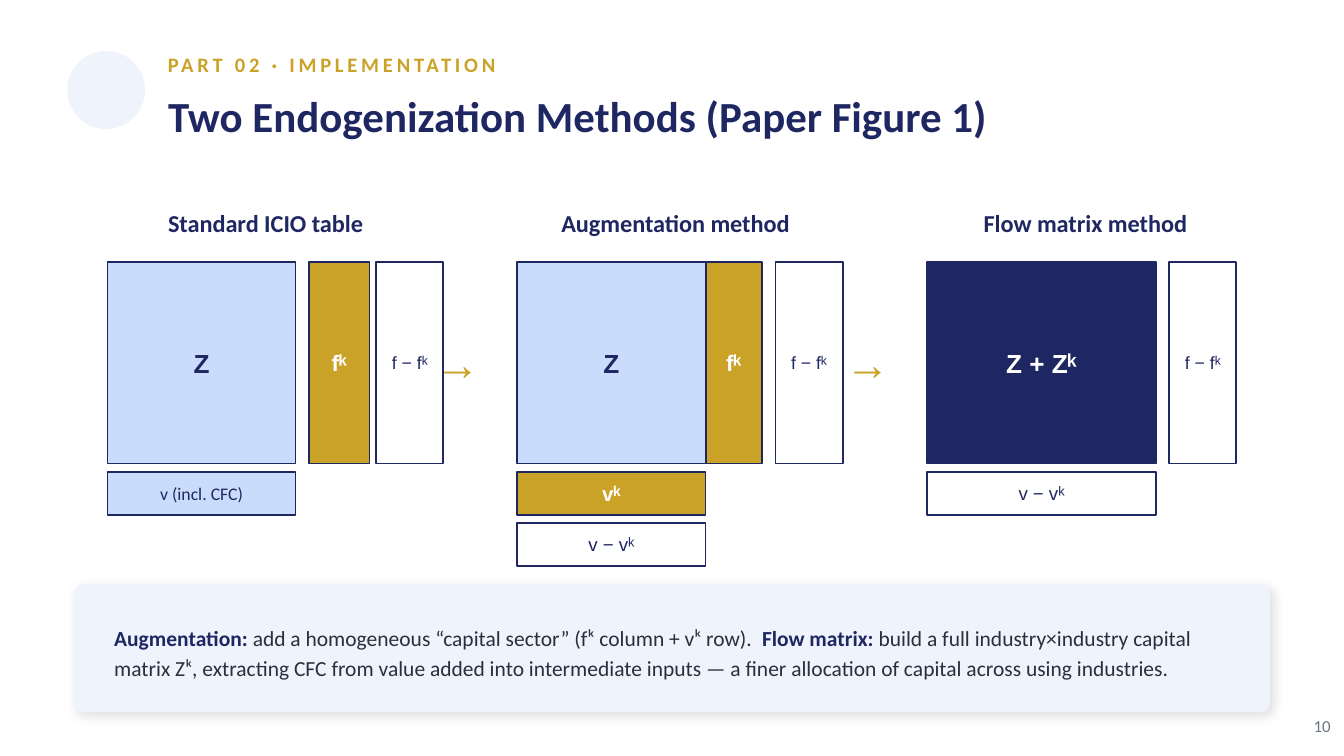
from dataclasses import dataclass

from lxml import etree
from pptx import Presentation
from pptx import util as u
from pptx.dml.color import RGBColor
from pptx.enum import shapes, text
from pptx.oxml.ns import qn

NAVY = RGBColor(0x1E, 0x27, 0x61)
GOLD = RGBColor(0xC9, 0xA2, 0x27)
SKY = RGBColor(0xCA, 0xDC, 0xFC)
MIST = RGBColor(0xEE, 0xF3, 0xFC)
WHITE = RGBColor(0xFF, 0xFF, 0xFF)
INK = RGBColor(0x26, 0x30, 0x3E)
GREY = RGBColor(0x6B, 0x75, 0x85)

LEFT, CENTER, RIGHT = text.PP_ALIGN.LEFT, text.PP_ALIGN.CENTER, text.PP_ALIGN.RIGHT

# The slide is a square grid, 100 columns wide.
WIDTH = u.Inches(10)
HEIGHT = WIDTH * 9 // 16
UNIT = WIDTH / 100

PANEL_LEFT, PANEL_PITCH = 8, 30.5
MATRIX_TOP, MATRIX_HEIGHT = 19.5, 15
BAR_HEIGHT, BAR_GAP = 3.2, 0.6


@dataclass(frozen=True)
class Area:
    """Place on the slide, in grid units."""
    left: float
    top: float
    width: float
    height: float

    def emu(self) -> list[int]:
        return [round(n * UNIT) for n in (self.left, self.top, self.width, self.height)]


@dataclass(frozen=True)
class Span:
    words: str
    size: float
    color: RGBColor
    bold: bool = False
    font: str = "Calibri"


@dataclass(frozen=True)
class Block:
    """Labelled rectangle; band 0 is the matrix, 1 and 2 are the bars below."""
    label: Span
    fill: RGBColor
    offset: float
    width: float
    band: int = 0


@dataclass(frozen=True)
class Panel:
    heading: str
    blocks: list[Block]


def symbol(words: str, size: float, color: RGBColor = NAVY, bold: bool = False) -> Span:
    return Span(words, size, color, bold, "Arial")


def final_demand(offset: float) -> Block:
    return Block(symbol("f − fᵏ", 9.5), WHITE, offset, 5)


def net_value_added(width: float, band: int) -> Block:
    return Block(symbol("v − vᵏ", 10), WHITE, 0, width, band)


Z_BLOCK = Block(symbol("Z", 14, bold=True), SKY, 0, 14)
CAPITAL = symbol("fᵏ", 12, WHITE, True)

PANELS = [
    Panel("Standard ICIO table", [
        Z_BLOCK,
        Block(CAPITAL, GOLD, 15, 4.5),
        final_demand(20),
        Block(Span("v (incl. CFC)", 9.5, NAVY), SKY, 0, 14, 1),
    ]),
    Panel("Augmentation method", [
        Z_BLOCK,
        Block(CAPITAL, GOLD, 14, 4.2),
        Block(symbol("vᵏ", 11, WHITE, True), GOLD, 0, 14, 1),
        net_value_added(14, 2),
        final_demand(19.2),
    ]),
    Panel("Flow matrix method", [
        Block(symbol("Z + Zᵏ", 14, WHITE, True), NAVY, 0, 17),
        net_value_added(17, 1),
        final_demand(18),
    ]),
]

EXPLANATION = [
    Span("Augmentation: ", 11.5, NAVY, True),
    Span("add a homogeneous “capital sector” (fᵏ column + vᵏ row).  ", 11.5, INK),
    Span("Flow matrix: ", 11.5, NAVY, True),
    Span("build a full industry×industry capital matrix Zᵏ, extracting CFC from value added "
         "into intermediate inputs — a finer allocation of capital across using industries.",
         11.5, INK),
]


def write(shape, spans: list[Span], align=LEFT):
    """Fill a shape with one paragraph, centred vertically and without insets."""
    frame = shape.text_frame
    frame.auto_size = text.MSO_AUTO_SIZE.NONE
    frame.word_wrap = True
    frame.vertical_anchor = text.MSO_ANCHOR.MIDDLE
    frame.margin_left = frame.margin_top = frame.margin_right = frame.margin_bottom = 0
    para = frame.paragraphs[0]
    para.alignment = align
    for span in spans:
        run = para.add_run()
        run.text = span.words
        run.font.name = span.font
        run.font.size = u.Pt(span.size)
        run.font.bold = span.bold
        run.font.color.rgb = span.color
    return para


def add_text(page, area: Area, spans: list[Span], align=LEFT):
    return write(page.shapes.add_textbox(*area.emu()), spans, align)


def add_filled(page, kind, area: Area, fill: RGBColor):
    shape = page.shapes.add_shape(kind, *area.emu())
    shape.shadow.inherit = False
    shape.fill.solid()
    shape.fill.fore_color.rgb = fill
    shape.line.fill.background()
    return shape


def add_soft_shadow(shape) -> None:
    effects = shape._element.spPr.find(qn("a:effectLst"))
    shadow = etree.SubElement(effects, qn("a:outerShdw"), blurRad=str(u.Pt(6)),
                              dist=str(u.Pt(2)), dir="2700000", algn="bl", rotWithShape="0")
    color = etree.SubElement(shadow, qn("a:srgbClr"), val="000000")
    etree.SubElement(color, qn("a:alpha"), val="13000")


def draw_block(page, block: Block, panel_left: float) -> None:
    top, height = MATRIX_TOP, MATRIX_HEIGHT
    if block.band:
        top += MATRIX_HEIGHT + BAR_GAP + (block.band - 1) * (BAR_HEIGHT + BAR_GAP)
        height = BAR_HEIGHT
    area = Area(panel_left + block.offset, top, block.width, height)
    shape = add_filled(page, shapes.MSO_SHAPE.RECTANGLE, area, block.fill)
    shape.line.color.rgb = NAVY
    shape.line.width = u.Pt(1)
    write(shape, [block.label], CENTER)


def draw_panel(page, panel: Panel, left: float) -> None:
    add_text(page, Area(left - 2.5, 15, 28.5, 3.2), [Span(panel.heading, 13, NAVY, True)], CENTER)
    for block in panel.blocks:
        draw_block(page, block, left)


def draw_header(page) -> None:
    add_filled(page, shapes.MSO_SHAPE.OVAL, Area(5, 3.8, 5.8, 5.8), MIST)
    para = add_text(page, Area(12.5, 3.4, 80, 2.8),
                    [Span("PART 02 · IMPLEMENTATION", 11, GOLD, True)])
    para.runs[0].font._element.set("spc", "200")
    title = page.shapes.title
    title.left, title.top, title.width, title.height = Area(12.5, 5.8, 83, 5.5).emu()
    write(title, [Span("Two Endogenization Methods (Paper Figure 1)", 23, NAVY, True)])


def draw_explanation(page) -> None:
    card = add_filled(page, shapes.MSO_SHAPE.ROUNDED_RECTANGLE, Area(5.5, 43.5, 89, 9.5), MIST)
    card.adjustments[0] = 0.07
    add_soft_shadow(card)
    para = add_text(page, Area(8.5, 44.8, 83, 7.2), EXPLANATION)
    para.line_spacing = u.Pt(16)


def main() -> None:
    deck = Presentation()
    deck.slide_width, deck.slide_height = WIDTH, HEIGHT
    page = deck.slides.add_slide(deck.slide_layouts.get_by_name("Title Only"))
    draw_header(page)
    for index, panel in enumerate(PANELS):
        left = PANEL_LEFT + index * PANEL_PITCH
        draw_panel(page, panel, left)
        if index:
            add_text(page, Area(left - 6.7, 24.5, 4.5, 5), [symbol("→", 24, GOLD, True)], CENTER)
    draw_explanation(page)
    add_text(page, Area(94.5, 52.5, 4.5, 3), [Span("10", 9, GREY)], RIGHT)
    deck.save("out.pptx")


if __name__ == "__main__":
    main()
